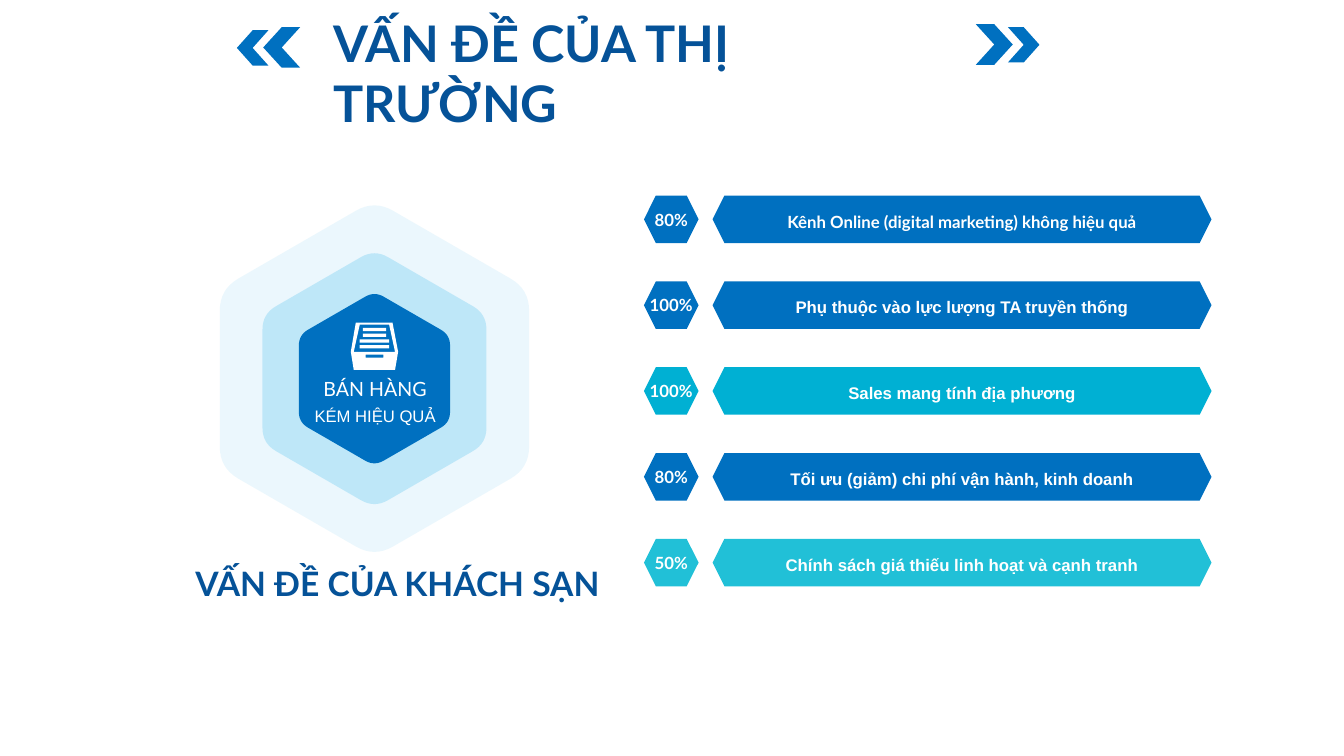
import math

import pptx
import pptx.dml.color
import pptx.enum.shapes
import pptx.enum.text
import pptx.oxml
import pptx.oxml.ns
import pptx.util

Pt = pptx.util.Pt
Kind = pptx.enum.shapes.MSO_SHAPE
Align = pptx.enum.text.PP_ALIGN
Anchor = pptx.enum.text.MSO_ANCHOR
Fit = pptx.enum.text.MSO_AUTO_SIZE

BLUE, CYAN, AQUA = "0070C0", "00B0D3", "21C0D7"
NAVY, SKY, WHITE = "055298", "00A4E6", "FFFFFF"


def color(text):
    return pptx.dml.color.RGBColor.from_string(text)


def assign(item, values):
    for name, value in values.items():
        setattr(item, name, value)


def box(left, top, width, height):
    return [(left, top), (left + width, top),
            (left + width, top + height), (left, top + height)]


def hexagon(x, y, inner, cut=0.12, steps=8):
    """Outline of an upright hexagon with rounded corners; inner is half its width."""
    size = inner / math.cos(math.pi / 6)
    tips = [(x + size * math.sin(math.pi * i / 3), y - size * math.cos(math.pi * i / 3))
            for i in range(6)]
    dots = []
    for i, tip in enumerate(tips):
        start, end = ([t + cut * (n - t) for t, n in zip(tip, near)]
                      for near in (tips[i - 1], tips[(i + 1) % 6]))
        for step in range(steps + 1):
            t = step / steps
            dots.append([(1 - t) ** 2 * a + 2 * t * (1 - t) * b + t * t * c
                         for a, b, c in zip(start, tip, end)])
    return dots


class Page:
    def __init__(self, deck):
        self.shapes = deck.slides.add_slide(deck.slide_layouts[6]).shapes
        self.font = {"name": "Lato", "size": Pt(12), "bold": True}
        self.frame = {"word_wrap": True, "vertical_anchor": Anchor.MIDDLE}

    def paint(self, shape, fill, alpha=None):
        shape.shadow.inherit = False
        shape.fill.solid()
        shape.fill.fore_color.rgb = color(fill)
        shape.line.fill.background()
        if alpha:
            tint = shape.fill._xPr.find(".//" + pptx.oxml.ns.qn("a:srgbClr"))
            mark = pptx.oxml.parse_xml(
                f'<a:alpha {pptx.oxml.ns.nsdecls("a")} val="{alpha * 1000}"/>')
            tint.append(mark)

    def label(self, shape, text, tone=WHITE, font=(), frame=(), para=()):
        body = shape.text_frame
        assign(body, {**self.frame, **dict(frame)})
        line = body.paragraphs[0]
        assign(line, {"alignment": Align.CENTER, **dict(para)})
        run = line.add_run()
        run.text = text
        assign(run.font, {**self.font, **dict(font)})
        run.font.color.rgb = color(tone)

    def shape(self, kind, place, fill, turn=0):
        shape = self.shapes.add_shape(kind, *map(Pt, place))
        shape.rotation = turn
        self.paint(shape, fill)
        return shape

    def text(self, place, text, **style):
        self.label(self.shapes.add_textbox(*map(Pt, place)), text, **style)

    def outline(self, paths, fill, alpha=None):
        pen = None
        for dots in paths:
            first, *rest = [(Pt(x), Pt(y)) for x, y in dots]
            if pen is None:
                pen = self.shapes.build_freeform(*first)
            else:
                pen.move_to(*first)
            pen.add_line_segments(rest, close=True)
        self.paint(pen.convert_to_shape(), fill, alpha)


def main():
    deck = pptx.Presentation()
    assign(deck, {"slide_width": Pt(960), "slide_height": Pt(540)})
    page = Page(deck)

    for left, top, width, height, turn in (
            (169.2, 21.6, 22.5, 25.2, 180), (188, 19.4, 26.4, 29, 180),
            (720, 19.4, 22.5, 25.2, 0), (697, 17.3, 26.4, 29, 0)):
        page.shape(Kind.CHEVRON, (left, top, width, height), BLUE, turn)

    rows = (("80%", BLUE, "Lato", "Kênh Online (digital marketing) không hiệu quả"),
            ("100%", BLUE, "Arial", "Phụ thuộc vào lực lượng TA truyền thống"),
            ("100%", CYAN, "Arial", "Sales mang tính địa phương"),
            ("80%", BLUE, "Arial", "Tối ưu (giảm) chi phí vận hành, kinh doanh"),
            ("50%", AQUA, "Arial", "Chính sách giá thiếu linh hoạt và cạnh tranh"))
    for i, (share, fill, face, issue) in enumerate(rows):
        top = 139.7 + 61.3 * i
        badge = page.shape(Kind.HEXAGON, (460, top, 39, 34), fill)
        page.label(badge, share, frame={"word_wrap": False})
        bar = page.shape(Kind.HEXAGON, (509, top, 356.4, 34), fill)
        page.label(bar, issue, font={"name": face}, para={"line_spacing": 1.2})

    for inner, fill, alpha in ((110.5, SKY, 8), (80, SKY, 19), (54, BLUE, None)):
        page.outline([hexagon(267.5, 270.5, inner)], fill, alpha)

    tray = [(254.2, 230.4), (280.4, 230.4), (284.4, 251.3),
            (282.2, 264.3), (252.7, 264.3), (250.6, 251.3)]
    sheet = [(257, 232), (278, 232), (282.2, 251.3), (252.7, 251.3)]
    lines = [box(267.5 - width / 2, 234.3 + 4.1 * i, width, 2.3)
             for i, width in enumerate((16.6, 16.6, 21, 21))]
    page.outline([tray, sheet, *lines, box(261.2, 253.4, 12.6, 2)], WHITE)

    edges = ("margin_left", "margin_top", "margin_right", "margin_bottom")
    tight = dict.fromkeys(edges, 0)
    for top, text, face, size in ((267.8, "BÁN HÀNG", "Lato", 14),
                                  (287.3, "KÉM HIỆU QUẢ", "Arial", 11.9)):
        page.text((221.8, top, 92.2, 19.4), text, frame=tight,
                  font={"name": face, "size": Pt(size), "bold": False})

    grow = {"word_wrap": False, "auto_size": Fit.SHAPE_TO_FIT_TEXT,
            "vertical_anchor": Anchor.TOP}
    for place, text, size in (
            ((231.1, 5, 463.7, 51), "VẤN ĐỀ CỦA THỊ TRƯỜNG", 36),
            ((132.5, 398.9, 303, 36), "VẤN ĐỀ CỦA KHÁCH SẠN", 24)):
        page.text(place, text, tone=NAVY, font={"size": Pt(size)},
                  frame=grow, para={"alignment": Align.LEFT})

    deck.save("out.pptx")


if __name__ == "__main__":
    main()
